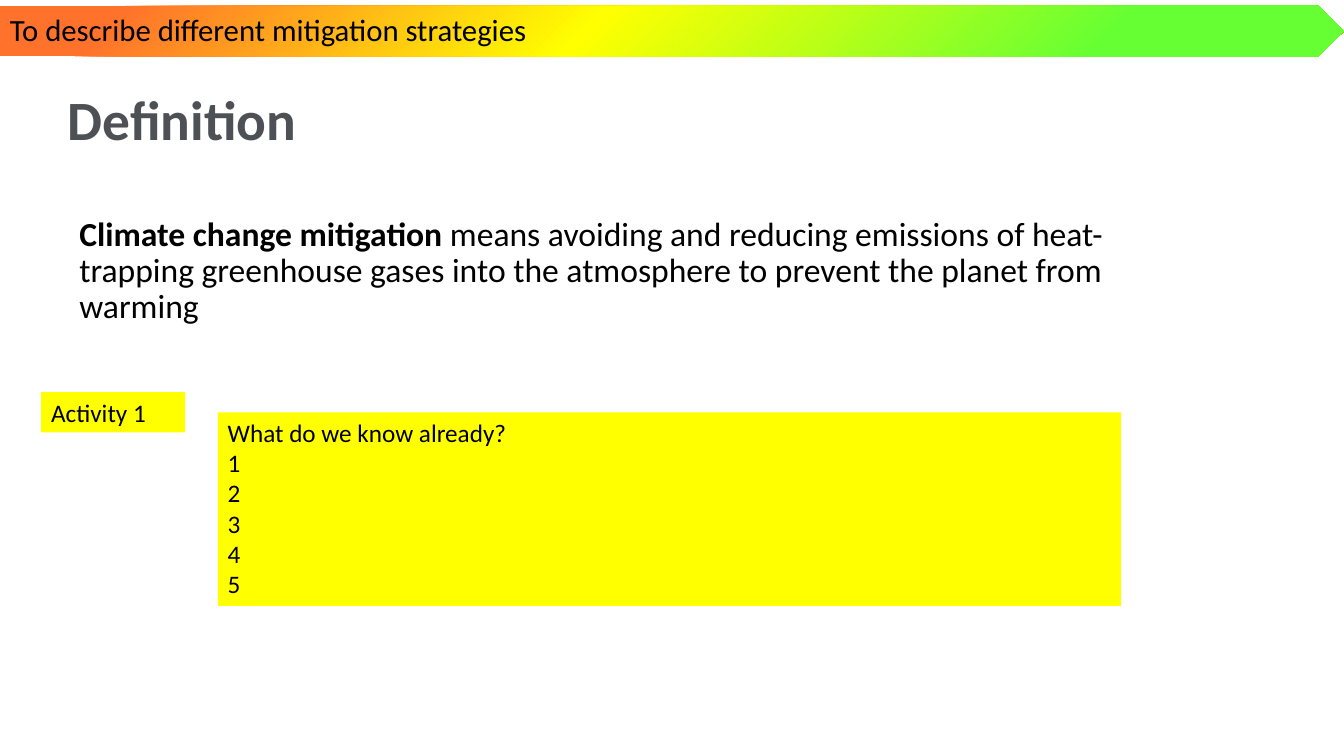
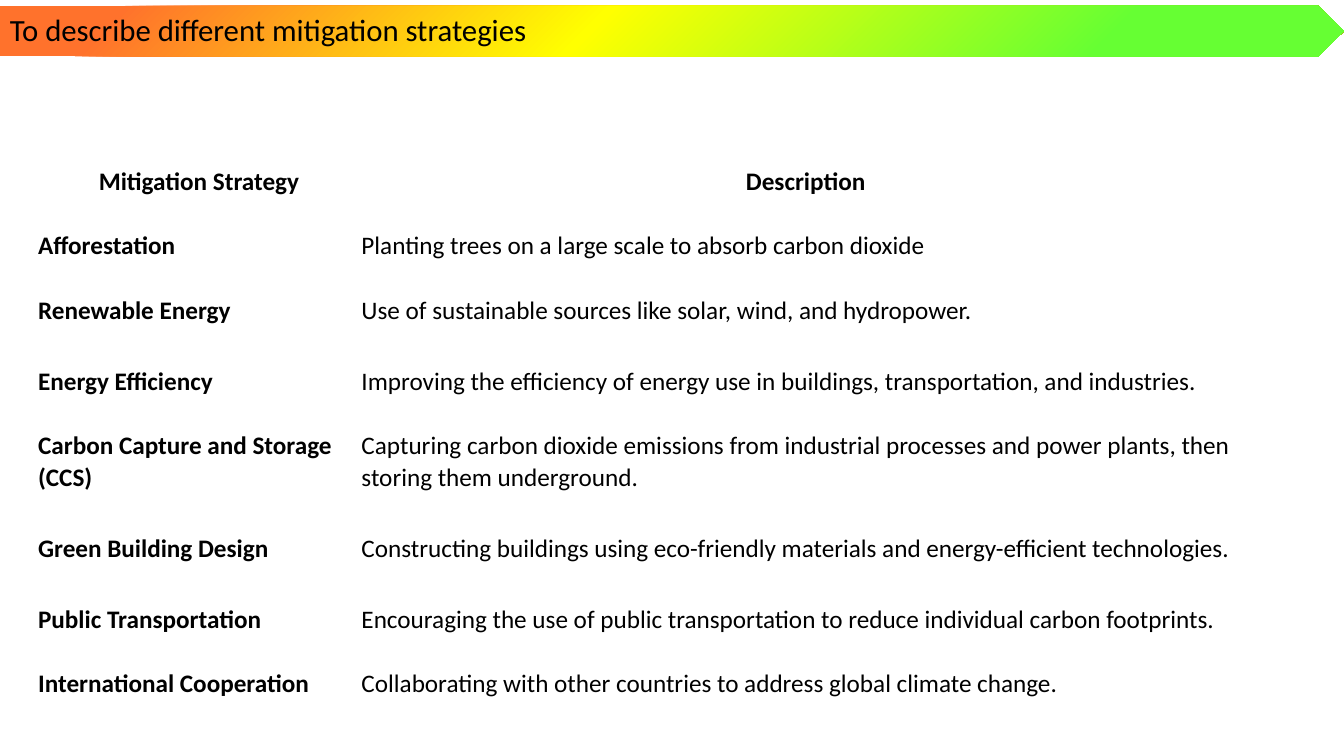
from lxml import etree
from pptx import Presentation
from pptx.dml.color import RGBColor
from pptx.enum.shapes import MSO_SHAPE
from pptx.enum.text import MSO_ANCHOR, MSO_AUTO_SIZE, PP_ALIGN
from pptx.oxml import parse_xml
from pptx.oxml.ns import nsdecls, qn
from pptx.util import Cm, Pt

RECT, ARROW = MSO_SHAPE.RECTANGLE, MSO_SHAPE.RIGHT_ARROW
TOP, MIDDLE, BOTTOM = MSO_ANCHOR.TOP, MSO_ANCHOR.MIDDLE, MSO_ANCHOR.BOTTOM
LEFT, CENTER = PP_ALIGN.LEFT, PP_ALIGN.CENTER
NO_AUTOFIT = MSO_AUTO_SIZE.NONE

# Shared style
FONT = "Calibri"
BLACK, GREY, YELLOW = "000000", "4D5156", "FFFF00"
SLIDE_W, SLIDE_H = 33.87, 19.05
TITLE_ONLY, BLANK = 5, 6
BAND_STOPS = [(0, "66FF33"), (18, "66FF33"), (56, "FFFF00"),
              (91, "FF722C"), (100, "FF722C")]

# Content
OBJECTIVE = "To describe different mitigation strategies"
TITLE = "Definition"
TERM = "Climate change mitigation "
MEANING = ("means avoiding and reducing emissions of heat-trapping greenhouse "
           "gases into the atmosphere to prevent the planet from warming")
ACTIVITY_BOXES = [  # left, top, width, height in cm, lines
    (1.04, 9.88, 3.63, 1.02, ["Activity 1"]),
    (5.49, 10.39, 22.76, 4.88,
     ["What do we know already?", "1", "2", "3", "4", "5"]),
]
COLUMN_WIDTHS = [8.15, 22.43]
STRATEGIES = [  # row height in cm, strategy, description
    (1.27, "Mitigation Strategy", "Description"),
    (1.63, "Afforestation",
     "Planting trees on a large scale to absorb carbon dioxide"),
    (1.63, "Renewable Energy",
     "Use of sustainable sources like solar, wind, and hydropower."),
    (1.78, "Energy Efficiency",
     "Improving the efficiency of energy use in buildings, transportation, "
     "and industries."),
    (2.44, "Carbon Capture and Storage (CCS)",
     "Capturing carbon dioxide emissions from industrial processes and power "
     "plants, then storing them underground."),
    (1.78, "Green Building Design",
     "Constructing buildings using eco-friendly materials and "
     "energy-efficient technologies."),
    (1.78, "Public Transportation",
     "Encouraging the use of public transportation to reduce individual "
     "carbon footprints."),
    (1.63, "International Cooperation",
     "Collaborating with other countries to address global climate change."),
]


def rgb(value):
    return RGBColor.from_string(value)


def style(p, size, color=BLACK, bold=False, align=LEFT, spacing=1.0):
    p.font.name, p.font.size, p.font.bold = FONT, Pt(size), bold
    p.font.color.rgb = rgb(color)
    p.alignment, p.line_spacing = align, spacing


def add_box(slide, kind, left, top, width, height, lines, size):
    sp = slide.shapes.add_shape(kind, Cm(left), Cm(top), Cm(width), Cm(height))
    sp.shadow.inherit = False
    sp.line.fill.background()
    tf = sp.text_frame
    tf.word_wrap, tf.vertical_anchor = True, TOP
    tf.text = "\n".join(lines)
    for p in tf.paragraphs:
        style(p, size)
    return sp


def add_band(slide):
    sp = add_box(slide, ARROW, 0, 0.15, SLIDE_W, 1.27, [OBJECTIVE], 22)
    sp.adjustments[0], sp.adjustments[1] = 1, 0.51
    # Radial gradient spreading from the bottom right corner
    grad = parse_xml(f'<a:gradFill {nsdecls("a")} rotWithShape="1"><a:gsLst/>'
                     '<a:path path="circle"><a:fillToRect l="100000" t="100000"/>'
                     '</a:path></a:gradFill>')
    for pos, color in BAND_STOPS:
        gs = etree.SubElement(grad[0], qn("a:gs"), pos=str(pos * 1000))
        etree.SubElement(gs, qn("a:srgbClr"), val=color)
    sp.element.spPr.find(qn("a:prstGeom")).addnext(grad)


def build_definition(prs):
    slide = prs.slides.add_slide(prs.slide_layouts[TITLE_ONLY])

    # Title
    title = slide.shapes.title
    title.left, title.top = Cm(1.45), Cm(2.24)
    title.width, title.height = Cm(29.21), Cm(1.68)
    tf = title.text_frame
    tf.text = TITLE
    tf.auto_size, tf.vertical_anchor = NO_AUTOFIT, MIDDLE
    style(tf.paragraphs[0], 39.6, GREY, True, spacing=0.9)

    # Definition text
    tb = slide.shapes.add_textbox(Cm(1.75), Cm(5.35), Cm(27.94), Cm(3.3))
    tf = tb.text_frame
    tf.word_wrap = True
    p = tf.paragraphs[0]
    style(p, 24, spacing=0.9)
    for text, bold in [(TERM, True), (MEANING, False)]:
        r = p.add_run()
        r.text, r.font.bold = text, bold

    # Activity boxes
    for left, top, width, height, lines in ACTIVITY_BOXES:
        sp = add_box(slide, RECT, left, top, width, height, lines, 18)
        sp.fill.solid()
        sp.fill.fore_color.rgb = rgb(YELLOW)
    add_band(slide)


def build_strategies(prs):
    slide = prs.slides.add_slide(prs.slide_layouts[BLANK])
    table = slide.shapes.add_table(
        len(STRATEGIES), len(COLUMN_WIDTHS), Cm(0.94), Cm(3.71),
        Cm(sum(COLUMN_WIDTHS)), Cm(sum(row[0] for row in STRATEGIES))).table
    table.first_row = table.horz_banding = False
    for column, width in zip(table.columns, COLUMN_WIDTHS):
        column.width = Cm(width)
    for i, (height, *texts) in enumerate(STRATEGIES):
        table.rows[i].height = Cm(height)
        for j, text in enumerate(texts):
            cell = table.cell(i, j)
            cell.fill.background()
            cell.vertical_anchor = BOTTOM
            cell.margin_left = cell.margin_right = Cm(0.02)
            cell.margin_top = cell.margin_bottom = Cm(0.02)
            cell.text = text
            style(cell.text_frame.paragraphs[0], 18, bold=i == 0 or j == 0,
                  align=CENTER if i == 0 else LEFT, spacing=1.07)
    add_band(slide)


def main():
    prs = Presentation()
    prs.slide_width, prs.slide_height = Cm(SLIDE_W), Cm(SLIDE_H)
    build_definition(prs)
    build_strategies(prs)
    prs.save("out.pptx")


if __name__ == "__main__":
    main()
